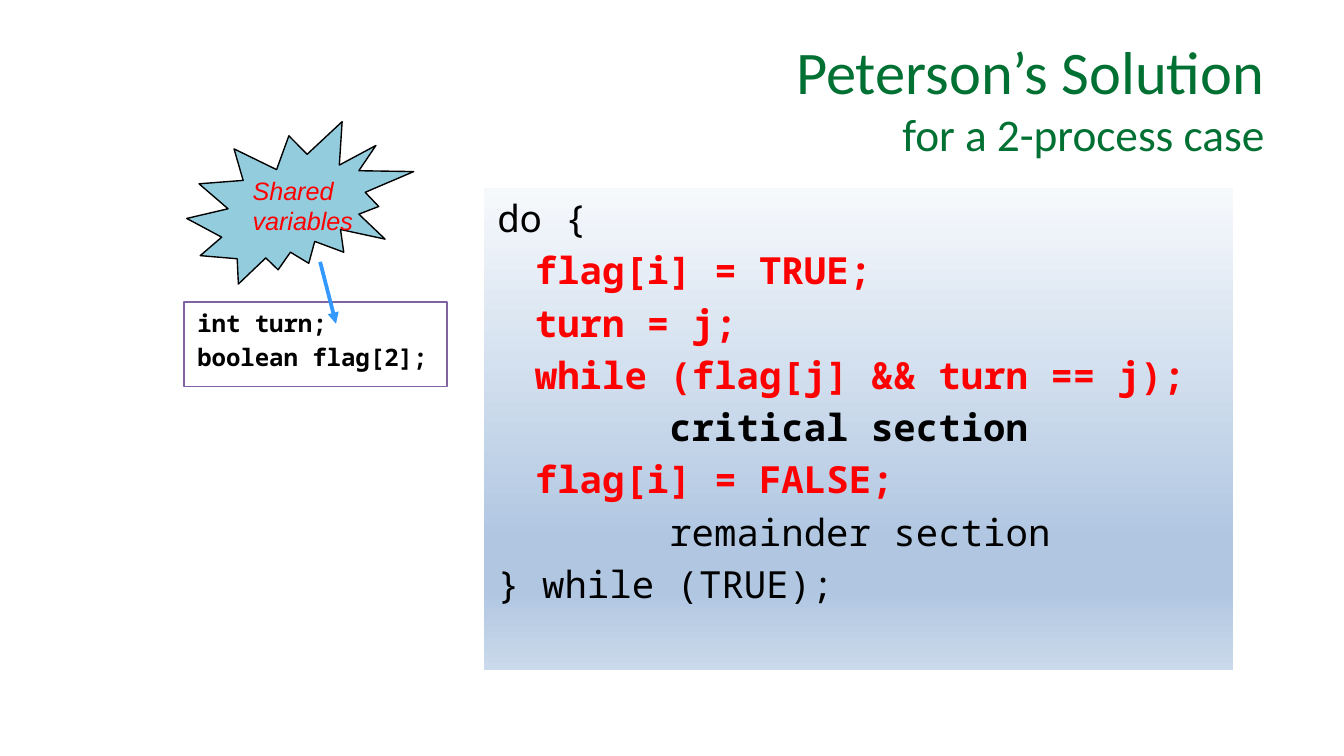
from dataclasses import dataclass

from lxml.etree import SubElement
from pptx import Presentation
from pptx.dml.color import RGBColor
from pptx.enum.shapes import MSO_CONNECTOR as Link, MSO_SHAPE as Kind
from pptx.enum.text import MSO_ANCHOR as Anchor, MSO_AUTO_SIZE as Fit, PP_ALIGN as Align
from pptx.oxml.ns import qn
from pptx.util import Cm, Pt

BLACK, RED, GREEN = "000000", "FF0000", "007033"
MONO = "Noto Sans Mono"


@dataclass
class Line:
    text: str
    indent: float = 0
    color: str = BLACK
    bold: bool = False


@dataclass
class Box:
    kind: Kind
    place: tuple[float, float, float, float]
    lines: list[Line]
    font: str
    size: float
    gap: float = 0
    fill: str | None = None
    edge: str | None = None
    inset: tuple[float, float] = (0.25, 0.13)
    wrap: bool = True
    italic: bool = False


def rgb(code: str) -> RGBColor:
    return RGBColor.from_string(code)


def style(font, name: str, size: float, color: str) -> None:
    font.name, font.size = name, Pt(size)
    font.color.rgb = rgb(color)


def draw(slide, box: Box):
    shape = slide.shapes.add_shape(box.kind, *map(Cm, box.place))
    shape.shadow.inherit = False
    if box.fill:
        shape.fill.solid()
        shape.fill.fore_color.rgb = rgb(box.fill)
    else:
        shape.fill.background()
    if box.edge:
        shape.line.color.rgb = rgb(box.edge)
        shape.line.width = Pt(0.75)
    else:
        shape.line.fill.background()

    frame = shape.text_frame
    frame.word_wrap = box.wrap
    frame.vertical_anchor = Anchor.TOP
    frame.margin_left = frame.margin_right = Cm(box.inset[0])
    frame.margin_top = frame.margin_bottom = Cm(box.inset[1])
    frame.text = "\n".join(line.text for line in box.lines)
    for i, (para, line) in enumerate(zip(frame.paragraphs, box.lines)):
        para.alignment = Align.LEFT
        if i:
            para.space_before = Pt(box.gap)
        if line.indent:
            para._p.get_or_add_pPr().set("marL", str(Cm(line.indent)))
        font = para.runs[0].font
        style(font, box.font, box.size, line.color)
        font.bold, font.italic = line.bold, box.italic
    return shape


def shade(shape, stops: list[tuple[int, str]]) -> None:
    """Fill from top to bottom with colours at percent positions."""
    shape.fill.gradient()
    grad = shape._element.spPr.find(qn("a:gradFill"))
    for child in list(grad):
        grad.remove(child)
    group = SubElement(grad, qn("a:gsLst"))
    for place, color in stops:
        stop = SubElement(group, qn("a:gs"), pos=str(place * 1000))
        SubElement(stop, qn("a:srgbClr"), val=color)
    SubElement(grad, qn("a:lin"), ang="5400000", scaled="0")


def arrow(slide, start: tuple[float, float], end: tuple[float, float], color: str) -> None:
    link = slide.shapes.add_connector(Link.STRAIGHT, *map(Cm, start + end))
    link.line.color.rgb = rgb(color)
    link.line.width = Pt(2)
    SubElement(link.line._get_or_add_ln(), qn("a:tailEnd"), type="triangle")
    SubElement(link._element.spPr, qn("a:effectLst"))


def head(slide) -> None:
    title = slide.shapes.title
    title.left, title.top, title.width, title.height = map(Cm, (1.24, 0.77, 22.91, 2.13))
    frame = title.text_frame
    frame.auto_size = Fit.NONE
    frame.word_wrap = True
    frame.vertical_anchor = Anchor.MIDDLE
    para = frame.paragraphs[0]
    para.text = "Peterson’s Solution\vfor a 2-process case"
    para.alignment = Align.RIGHT
    for run, size in zip(para.runs, (32.4, 24.3)):
        style(run.font, "Calibri", size, GREEN)


STEP, DEEP = 0.71, 3.25
SHARED = Box(
    Kind.RECTANGLE, (3.48, 5.71, 4.97, 1.6),
    [Line("int turn;", bold=True), Line("boolean flag[2];", bold=True)],
    MONO, 12.9, gap=2.6, edge="8064A2",
)
CODE = Box(
    Kind.RECTANGLE, (9.15, 3.56, 14.15, 9.1),
    [
        Line("do {"),
        Line("flag[i] = TRUE;", STEP, RED, True),
        Line("turn = j;", STEP, RED, True),
        Line("while (flag[j] && turn == j);", STEP, RED, True),
        Line("critical section", DEEP, bold=True),
        Line("flag[i] = FALSE;", STEP, RED, True),
        Line("remainder section", DEEP),
        Line("} while (TRUE);"),
    ],
    MONO, 20, gap=4,
)
BURST = Box(
    Kind.EXPLOSION2, (3.53, 2.3, 4.29, 3.07),
    [Line("Shared", color=RED), Line("variables", color=RED)],
    "Arial", 13.5, fill="93CDDD", edge=BLACK,
    inset=(0.18, 0.1), wrap=False, italic=True,
)


def main() -> None:
    deck = Presentation()
    deck.slide_width, deck.slide_height = Cm(25.4), Cm(14.29)
    slide = deck.slides.add_slide(deck.slide_layouts[5])
    head(slide)
    draw(slide, SHARED)
    code = draw(slide, CODE)
    shade(code, [(0, "F6F9FC"), (74, "B0C6E1"), (83, "B0C6E1"), (100, "CAD9EB")])
    draw(slide, BURST)
    arrow(slide, (6.05, 4.95), (6.35, 6.12), "3399FF")
    deck.save("out.pptx")


if __name__ == "__main__":
    main()
